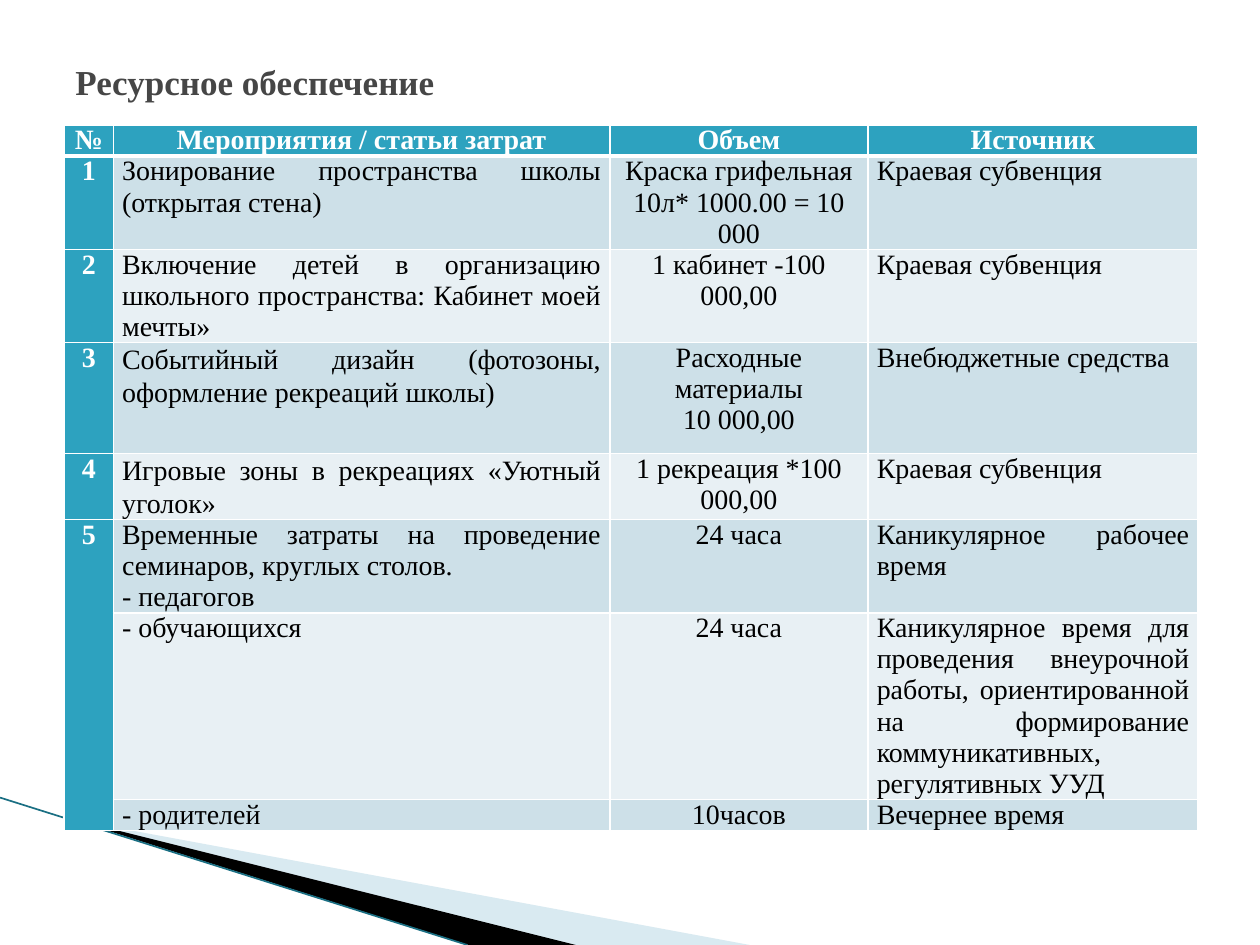
"""Builds a slide with the resource plan of a school project."""
from lxml import etree
from pptx import Presentation
from pptx import util as u
from pptx.dml.color import RGBColor
from pptx.enum import shapes, text
from pptx.oxml.ns import qn

THEME = {
    "font": "Times New Roman", "title_size": 20, "table_size": 16,
    "title": "464646", "ink": "000000", "white": "FFFFFF", "accent": "2DA2BF",
    "bands": ("CDE0E8", "E8F0F4"), "pale": "A0CBDC", "stripe": "1A6F83",
}
TITLE = "Ресурсное обеспечение"
HEADINGS = ("№", "Мероприятия / статьи затрат", "Объем", "Источник")
COSTS = [
    ("1", "Зонирование пространства школы (открытая стена)",
     "Краска грифельная\n10л* 1000.00 = 10 000", "Краевая субвенция"),
    ("2", "Включение детей в организацию школьного пространства: Кабинет моей мечты»",
     "1 кабинет -100 000,00", "Краевая субвенция"),
    ("3", "Событийный дизайн (фотозоны, оформление рекреаций школы)",
     "Расходные материалы\n10 000,00", "Внебюджетные средства"),
    ("4", "Игровые зоны в рекреациях «Уютный уголок»",
     "1 рекреация *100 000,00", "Краевая субвенция"),
    ("5", "Временные затраты на проведение семинаров, круглых столов.\n- педагогов",
     "24 часа", "Каникулярное рабочее время"),
    ("", "- обучающихся", "24 часа",
     "Каникулярное время для проведения внеурочной работы, ориентированной на "
     "формирование коммуникативных, регулятивных УУД"),
    ("", "- родителей", "10часов", "Вечернее время"),
]
COLUMN_WIDTHS = (0.39, 3.94, 2.05, 2.62)
ROW_HEIGHTS = (0.24, 0.74, 0.74, 0.88, 0.52, 0.74, 1.48, 0.24)
LOOSE_ROWS = (3, 4)
PALE_WEDGE = ((0.55, 6.5), (5.95, 7.5), (4.56, 7.5))
DARK_WEDGE = ((0.53, 6.49), (4.57, 7.5), (3.72, 7.5))
STRIPE = (0, 6.33, 3.71, 7.5)


def color(name):
    return RGBColor.from_string(THEME.get(name, name))


def style(paragraph, size, ink, bold, align):
    paragraph.alignment = align
    paragraph.font.name = THEME["font"]
    paragraph.font.size = u.Pt(size)
    paragraph.font.bold = bold
    paragraph.font.color.rgb = color(ink)


def add_wedge(slide, points, fill, alpha=None):
    corners = [(u.Inches(x), u.Inches(y)) for x, y in points]
    builder = slide.shapes.build_freeform(*corners[0])
    builder.add_line_segments(corners[1:], close=True)
    wedge = builder.convert_to_shape()
    wedge.shadow.inherit = False
    wedge.line.fill.background()
    wedge.fill.solid()
    wedge.fill.fore_color.rgb = color(fill)
    if alpha:
        tint = wedge.fill._xPr.find(f".//{qn('a:srgbClr')}")
        etree.SubElement(tint, qn("a:alpha")).set("val", str(alpha * 1000))


def add_stripe(slide):
    stripe = slide.shapes.add_connector(
        shapes.MSO_CONNECTOR.STRAIGHT, *(u.Inches(v) for v in STRIPE))
    stripe.line.color.rgb = color("stripe")
    stripe.line.width = u.Pt(0.95)
    etree.SubElement(stripe._element.spPr, qn("a:effectLst"))


def set_borders(cell, bottom):
    properties = cell._tc.get_or_add_tcPr()
    for place, (side, width) in enumerate(
            (("lnL", 1), ("lnR", 1), ("lnT", 1), ("lnB", bottom))):
        edge = etree.Element(qn(f"a:{side}"), w=str(u.Pt(width)))
        fill = etree.SubElement(edge, qn("a:solidFill"))
        etree.SubElement(fill, qn("a:srgbClr")).set("val", THEME["white"])
        properties.insert(place, edge)


def fill_cell(cell, row, column, content):
    heading = row == 0
    accented = heading or column == 0
    cell.margin_left = cell.margin_right = u.Inches(0.07)
    cell.margin_top = cell.margin_bottom = 0
    cell.vertical_anchor = text.MSO_ANCHOR.MIDDLE if heading else text.MSO_ANCHOR.TOP
    cell.fill.solid()
    cell.fill.fore_color.rgb = color(
        "accent" if accented else THEME["bands"][(row - 1) % 2])
    set_borders(cell, 3 if heading else 1)
    cell.text_frame.text = content
    centred = accented or column == 2
    align = text.PP_ALIGN.CENTER if centred else text.PP_ALIGN.JUSTIFY
    for paragraph in cell.text_frame.paragraphs:
        style(paragraph, THEME["table_size"], "white" if accented else "ink",
              accented, align)
        if row in LOOSE_ROWS and column == 1:
            paragraph.line_spacing = 1.06
            paragraph.space_after = u.Pt(8)


def add_costs(slide):
    rows = [HEADINGS, *COSTS]
    costs = slide.shapes.add_table(
        len(rows), len(HEADINGS), u.Inches(0.51), u.Inches(0.99),
        u.Inches(sum(COLUMN_WIDTHS)), u.Inches(sum(ROW_HEIGHTS))).table
    costs.horz_banding = False
    for column, width in zip(costs.columns, COLUMN_WIDTHS):
        column.width = u.Inches(width)
    for row, height in zip(costs.rows, ROW_HEIGHTS):
        row.height = u.Inches(height)
    for r, entries in enumerate(rows):
        for c, content in enumerate(entries):
            fill_cell(costs.cell(r, c), r, c, content)
    costs.cell(5, 0).merge(costs.cell(7, 0))


def add_title(slide):
    frame = slide.shapes.add_textbox(
        u.Inches(0.5), u.Inches(0.3), u.Inches(9), u.Inches(0.69)).text_frame
    frame.word_wrap = True
    frame.vertical_anchor = text.MSO_ANCHOR.MIDDLE
    frame.text = TITLE
    style(frame.paragraphs[0], THEME["title_size"], "title", True, text.PP_ALIGN.LEFT)


def main():
    deck = Presentation()
    deck.slide_width, deck.slide_height = u.Inches(10), u.Inches(7.5)
    slide = deck.slides.add_slide(deck.slide_layouts[6])
    add_wedge(slide, PALE_WEDGE, "pale", 40)
    add_wedge(slide, DARK_WEDGE, "ink")
    add_stripe(slide)
    add_costs(slide)
    add_title(slide)
    deck.save("out.pptx")


if __name__ == "__main__":
    main()
